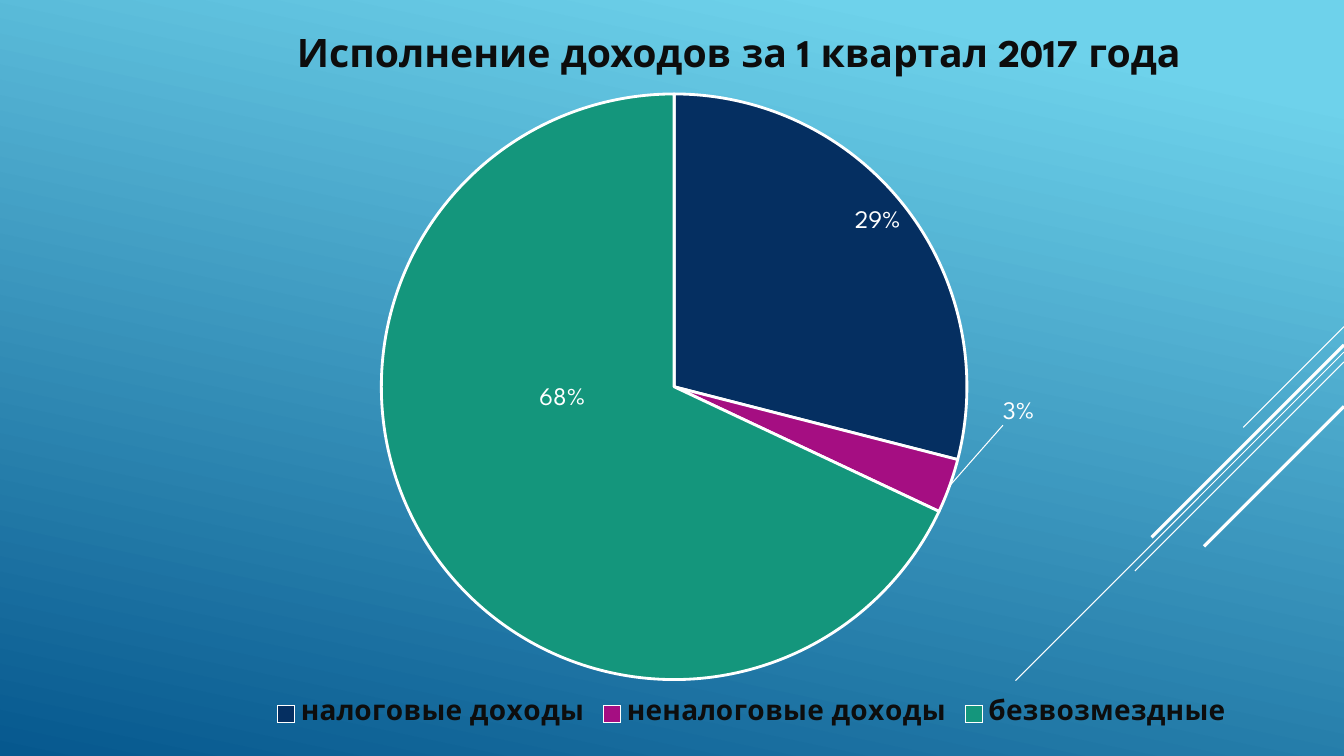
from lxml import etree
from pptx import Presentation
from pptx import util as u
from pptx.chart import data as chart_data
from pptx.dml.color import RGBColor
from pptx.enum import chart as chart_enum, shapes, text
from pptx.oxml import parse_xml
from pptx.oxml.ns import nsdecls, qn

WHITE = RGBColor(0xFF, 0xFF, 0xFF)
INK = RGBColor(0x0D, 0x0D, 0x0D)
SKY = RGBColor(0x6E, 0xD2, 0xEB)
DEEP = RGBColor(0x06, 0x58, 0x8E)
NAVY = RGBColor(0x05, 0x2F, 0x61)
PLUM = RGBColor(0xA5, 0x0E, 0x82)
GREEN = RGBColor(0x14, 0x96, 0x7C)
FACE = "League Spartan"

INCOME = [
    ("налоговые доходы", 29, NAVY),
    ("неналоговые доходы", 3, PLUM),
    ("безвозмездные", 68, GREEN),
]
STRIPES = [(0, 2.54, 0.75), (0.64, 8.28, 0.75), (0.89, 5.27, 0.75),
           (0.46, 4.85, 2.25), (2.01, 3.53, 2.25)]
POSITION = chart_enum.XL_LABEL_POSITION
MOVED_LABELS = [(1, POSITION.OUTSIDE_END, 0.04, -0.13),
                (2, POSITION.CENTER, 0.01, -0.1)]


def set_font(font, size, color, bold=False):
    values = {"name": FACE, "size": u.Pt(size), "bold": bold}
    for name, value in values.items():
        setattr(font, name, value)
    font.color.rgb = color


def layout_xml(**values):
    parts = "".join(f'<c:{name} val="{value}"/>' for name, value in values.items())
    return parse_xml(f'<c:layout {nsdecls("c")}><c:manualLayout>{parts}'
                     '</c:manualLayout></c:layout>')


def place_layout(parent, layout, index):
    for old in parent.findall(qn("c:layout")):
        parent.remove(old)
    parent.insert(index, layout)


def paint_background(page):
    fill = page.background.fill
    fill.gradient()
    fill.gradient_angle = 258
    for stop, color, position in zip(fill.gradient_stops, (SKY, DEEP), (0.1, 1)):
        stop.color.rgb = color
        stop.position = position


def add_stripes(page, right, top):
    for drop, reach, weight in STRIPES:
        start = top + u.Cm(drop)
        stripe = page.shapes.add_connector(
            shapes.MSO_CONNECTOR.STRAIGHT,
            right, start, right - u.Cm(reach), start + u.Cm(reach))
        stripe.line.color.rgb = WHITE
        stripe.line.width = u.Pt(weight)
        etree.SubElement(stripe._element.spPr, qn("a:effectLst"))


def add_title(page, left, top, width, height):
    box = page.shapes.add_textbox(left, top, width, height)
    box.text_frame.word_wrap = True
    para = box.text_frame.paragraphs[0]
    para.alignment = text.PP_ALIGN.CENTER
    span = para.add_run()
    span.text = "Исполнение доходов за 1 квартал 2017 года"
    set_font(span.font, 28, INK, True)


def label_slices(series):
    labels = series.data_labels
    values = {"show_percentage": True, "show_value": False,
              "position": POSITION.INSIDE_END}
    for name, value in values.items():
        setattr(labels, name, value)
    set_font(labels.font, 18, WHITE)
    for index, position, x, y in MOVED_LABELS:
        label = series.points[index].data_label
        label.position = position
        set_font(label.font, 18, WHITE)
    root = labels._element
    for element, (_, _, x, y) in zip(root.findall(qn("c:dLbl")), MOVED_LABELS):
        place_layout(element, layout_xml(x=x, y=y), 1)
        element.find(qn("c:showVal")).set("val", "0")
        element.find(qn("c:showPercent")).set("val", "1")
    for old in root.findall(qn("c:showLeaderLines")):
        root.remove(old)
    etree.SubElement(root, qn("c:showLeaderLines")).set("val", "1")
    root.append(parse_xml(
        f'<c:leaderLines {nsdecls("c", "a")}><c:spPr><a:ln w="9525"><a:solidFill>'
        f'<a:srgbClr val="{WHITE}"/></a:solidFill></a:ln></c:spPr></c:leaderLines>'))


def add_income_pie(page, left, top, width, height):
    source = chart_data.CategoryChartData()
    source.categories = [name for name, _, _ in INCOME]
    source.add_series("Series 1", [share for _, share, _ in INCOME])
    chart = page.shapes.add_chart(chart_enum.XL_CHART_TYPE.PIE,
                                  left, top, width, height, source).chart
    chart.has_title = False
    set_font(chart.font, 10, WHITE)
    chart.has_legend = True
    chart.legend.position = chart_enum.XL_LEGEND_POSITION.BOTTOM
    chart.legend.include_in_layout = False
    set_font(chart.legend.font, 20, INK, True)
    place_layout(chart.legend._element, layout_xml(
        xMode="edge", yMode="edge", x=0.16, y=0.92, w=0.81, h=0.08), 1)

    plot = chart.plots[0]
    plot.vary_by_categories = True
    place_layout(plot._element.getparent(), layout_xml(
        layoutTarget="inner", xMode="edge", yMode="edge",
        x=0.255, y=0.02, w=0.49, h=0.89), 0)
    series = plot.series[0]
    for index, (_, _, color) in enumerate(INCOME):
        piece = series.points[index].format
        piece.fill.solid()
        piece.fill.fore_color.rgb = color
        piece.line.color.rgb = WHITE
        piece.line.width = u.Pt(2)
    label_slices(series)


def main():
    deck = Presentation()
    deck.slide_width = u.Cm(33.87)
    deck.slide_height = u.Cm(19.05)
    page = deck.slides.add_slide(deck.slide_layouts[6])
    paint_background(page)
    add_stripes(page, deck.slide_width, u.Cm(8.23))
    add_title(page, u.Cm(7.01), u.Cm(0.58), u.Cm(23.22), u.Cm(1.45))
    add_income_pie(page, u.Cm(1.93), u.Cm(2.01), u.Cm(30.12), u.Cm(16.64))
    deck.save("out.pptx")


if __name__ == "__main__":
    main()
